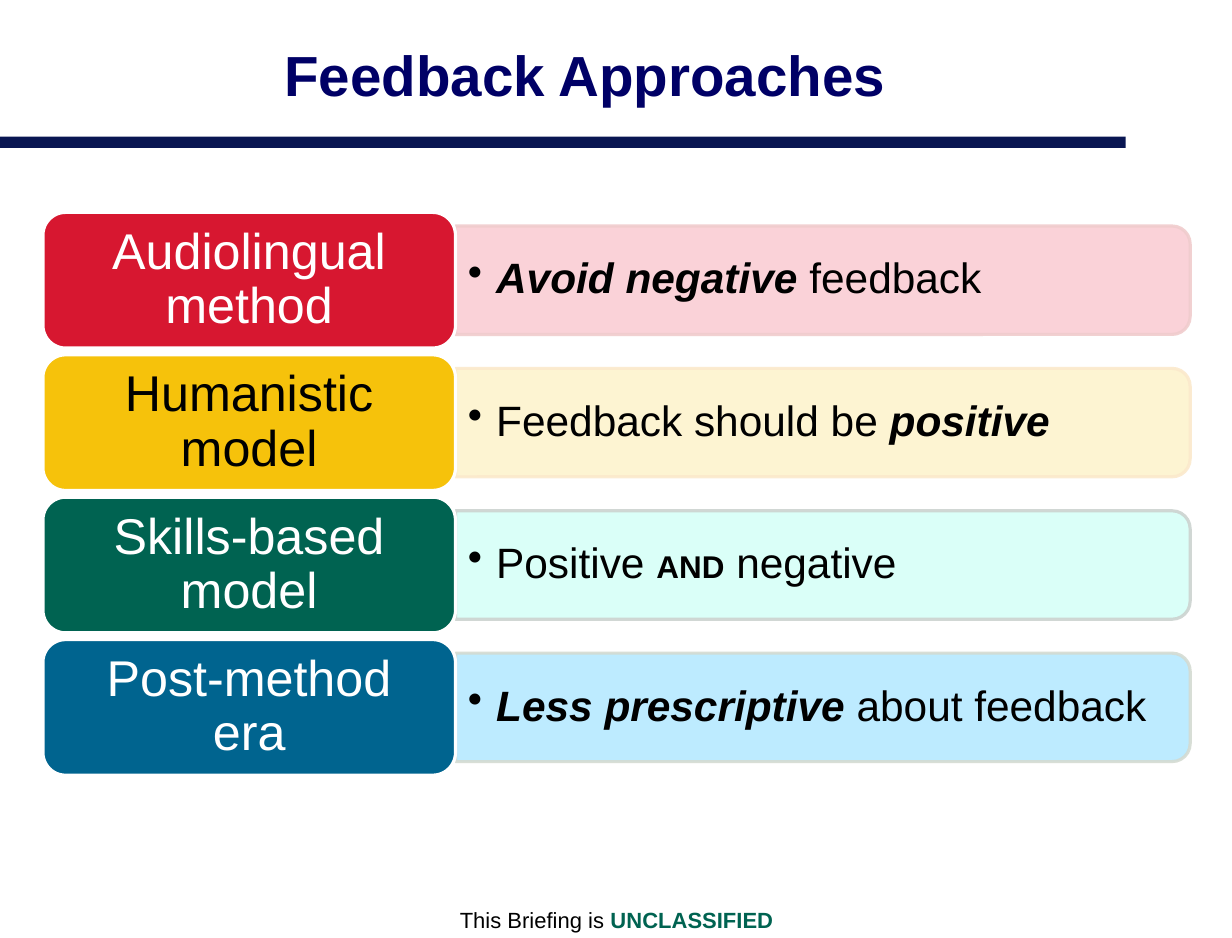
from dataclasses import dataclass

from lxml import etree
from pptx import Presentation
from pptx import util as u
from pptx.dml import color
from pptx.enum import shapes, text
from pptx.oxml import ns


@dataclass(frozen=True)
class Theme:
    font: str = "Arial"
    white: str = "FFFFFF"
    black: str = "000000"
    title: str = "000066"
    rule: str = "091652"
    marking: str = "006351"
    title_size: int = 36
    label_size: int = 32
    point_size: int = 27
    small_caps_size: int = 20
    footer_size: int = 14
    outline: int = 2
    panel_alpha: int = 90


@dataclass(frozen=True)
class Box:
    left: float
    top: float
    width: float
    height: float

    def lengths(self):
        return [u.Inches(v) for v in (self.left, self.top, self.width, self.height)]


THEME = Theme()
STRONG = {"bold": True, "italic": True}
APPROACHES = [
    ("Audiolingual method", "D71730", THEME.white, "FACED4", "F0CCCD",
     [("Avoid negative", STRONG), (" feedback", {})]),
    ("Humanistic model", "F6C20B", THEME.black, "FDF3CE", "FBE9CC",
     [("Feedback should be ", {}), ("positive", STRONG)]),
    ("Skills-based model", "006351", THEME.white, "D6FFF8", "CCD3D0",
     [("Positive ", {}),
      ("AND", {"bold": True, "size": u.Pt(THEME.small_caps_size)}),
      (" negative", {})]),
    ("Post-method era", "00648F", THEME.white, "B6E9FF", "D4DBD2",
     [("Less prescriptive ", STRONG), ("about feedback", {})]),
]


def apply(target, values):
    for name, value in values.items():
        setattr(target, name, value)


def set_alpha(fill_format, percent):
    for solid in fill_format.iter(ns.qn("a:srgbClr")):
        etree.SubElement(solid, ns.qn("a:alpha"), val=str(percent * 1000))


def add_block(slide, kind, box, fill, line=None):
    block = slide.shapes.add_shape(kind, *box.lengths())
    block.shadow.inherit = False
    block.fill.solid()
    block.fill.fore_color.rgb = color.RGBColor.from_string(fill)
    if line:
        block.line.color.rgb = color.RGBColor.from_string(line)
        block.line.width = u.Pt(THEME.outline)
    else:
        block.line.fill.background()
    return block


def write(holder, runs, size, ink, frame=None, paragraph=None, bullet=False):
    words = holder.text_frame
    apply(words, {"word_wrap": True, **(frame or {})})
    line = words.paragraphs[0]
    if bullet:
        properties = line._p.get_or_add_pPr()
        indent = u.Inches(0.25)
        properties.set("marL", str(indent))
        properties.set("indent", str(-indent))
        etree.SubElement(properties, ns.qn("a:buChar"), char="•")
    apply(line, {"alignment": text.PP_ALIGN.CENTER, **(paragraph or {})})
    for wording, style in runs:
        run = line.add_run()
        run.text = wording
        style = dict(style)
        run_ink = style.pop("ink", ink)
        apply(run.font, {"name": THEME.font, "size": u.Pt(size),
                         "bold": False, "italic": False, **style})
        run.font.color.rgb = color.RGBColor.from_string(run_ink)


def middle(side, edge):
    return {"vertical_anchor": text.MSO_ANCHOR.MIDDLE,
            "margin_left": u.Inches(side), "margin_right": u.Inches(side),
            "margin_top": u.Inches(edge), "margin_bottom": u.Inches(edge)}


def add_header(slide, box):
    rule_height = 0.1
    add_block(slide, shapes.MSO_SHAPE.RECTANGLE,
              Box(box.left, box.top + box.height - rule_height, box.width, rule_height),
              THEME.rule)
    title = slide.shapes.add_textbox(
        *Box(box.left + 1.13, box.top, 8.09, 1.3).lengths())
    write(title, [("Feedback Approaches", {"bold": True})],
          THEME.title_size, THEME.title, middle(0.1, 0.05))


def add_panel(slide, box, fill, line, point):
    upright = Box(box.left + (box.width - box.height) / 2,
                  box.top + (box.height - box.width) / 2, box.height, box.width)
    panel = add_block(slide, shapes.MSO_SHAPE.ROUND_2_SAME_RECTANGLE, upright, fill, line)
    panel.rotation = 90
    set_alpha(panel._element.spPr, THEME.panel_alpha)
    words = slide.shapes.add_textbox(
        *Box(box.left, box.top + 0.05, box.width - 0.05, box.height - 0.1).lengths())
    write(words, point, THEME.point_size, THEME.black, middle(0.11, 0.06),
          {"alignment": text.PP_ALIGN.LEFT, "line_spacing": 0.9}, bullet=True)


def add_approach(slide, box, approach):
    name, fill, ink, panel_fill, panel_line, point = approach
    label_width = 3.65
    panel_height = box.height * 0.8
    add_panel(slide, Box(box.left + label_width, box.top + (box.height - panel_height) / 2,
                         box.width - label_width, panel_height),
              panel_fill, panel_line, point)
    label = add_block(slide, shapes.MSO_SHAPE.ROUNDED_RECTANGLE,
                      Box(box.left, box.top, label_width, box.height), fill, THEME.white)
    write(label, [(name, {})], THEME.label_size, ink,
          middle(0.13, 0.07), {"line_spacing": 0.9})


def add_approaches(slide, box):
    gap = 0.06
    height = (box.height - gap * (len(APPROACHES) - 1)) / len(APPROACHES)
    for row, approach in enumerate(APPROACHES):
        top = box.top + row * (height + gap)
        add_approach(slide, Box(box.left, top, box.width, height), approach)


def add_footer(slide, box):
    footer = slide.shapes.add_textbox(*box.lengths())
    write(footer, [("This Briefing is ", {}),
                   ("UNCLASSIFIED", {"bold": True, "ink": THEME.marking})],
          THEME.footer_size, THEME.black)


def main():
    deck = Presentation()
    apply(deck, {"slide_width": u.Inches(10.9), "slide_height": u.Inches(8.3)})
    slide = deck.slides.add_slide(deck.slide_layouts[6])
    add_header(slide, Box(0, 0, 9.96, 1.31))
    add_approaches(slide, Box(0.38, 1.88, 10.15, 4.98))
    add_footer(slide, Box(2.75, 7.97, 5.41, 0.33))
    deck.save("out.pptx")


if __name__ == "__main__":
    main()
